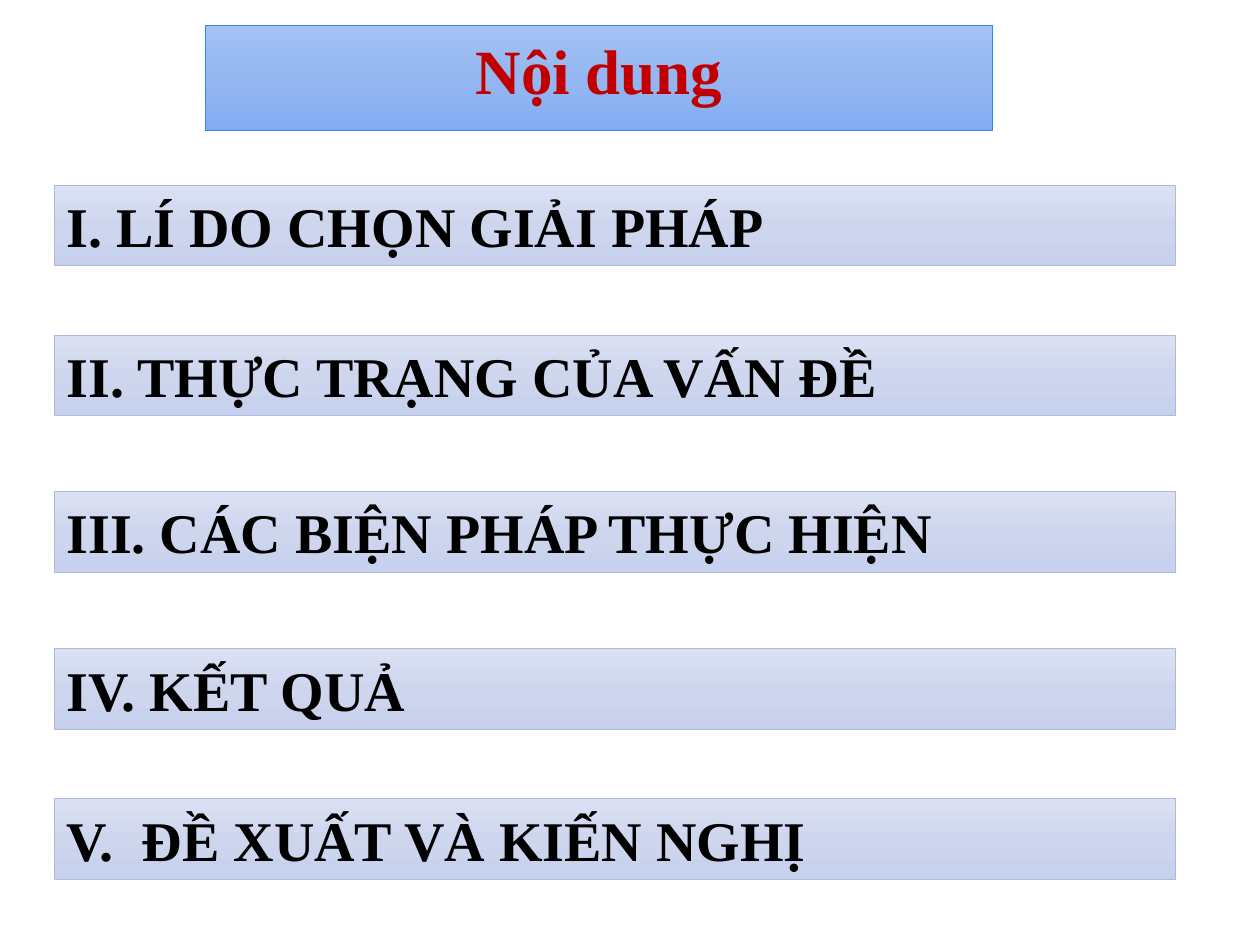
from copy import deepcopy

from pptx import Presentation
from pptx.dml.color import RGBColor
from pptx.enum.shapes import MSO_SHAPE as Shape
from pptx.enum.text import MSO_ANCHOR as Anchor, MSO_AUTO_SIZE as AutoSize, PP_ALIGN as Align
from pptx.oxml.ns import qn
from pptx.util import Inches, Pt

FONT = "Times New Roman"
RED = RGBColor(0xC0, 0x00, 0x00)
BLACK = RGBColor(0x00, 0x00, 0x00)
TITLE_LINE = RGBColor(0x2D, 0x8A, 0xE7)
TITLE_FILL = (RGBColor(0xA3, 0xC2, 0xF4), RGBColor(0x95, 0xB7, 0xF1), RGBColor(0x81, 0xAD, 0xF3))
ITEM_LINE = RGBColor(0xAA, 0xB8, 0xE2)
ITEM_FILL = (RGBColor(0xDB, 0xE1, 0xF3), RGBColor(0xCE, 0xD6, 0xEE), RGBColor(0xC7, 0xD0, 0xED))

ITEM_LEFT, ITEM_WIDTH, ITEM_HEIGHT = 0.43, 8.9, 0.64
ITEMS = (
    (1.47, "I. LÍ DO CHỌN GIẢI PHÁP"),
    (2.66, "II. THỰC TRẠNG CỦA VẤN ĐỀ"),
    (3.9, "III. CÁC BIỆN PHÁP THỰC HIỆN"),
    (5.15, "IV. KẾT QUẢ"),
    (6.34, "V.  ĐỀ XUẤT VÀ KIẾN NGHỊ"),
)


def style_box(sp, colors, line_color):
    """Give a box a vertical three-stop gradient and a thin outline."""
    sp.fill.gradient()
    sp.fill.gradient_angle = 270
    stops = sp.element.spPr.find(".//" + qn("a:gsLst"))
    stops.insert(1, deepcopy(stops[0]))
    for stop, position, color in zip(sp.fill.gradient_stops, (0, 0.5, 1), colors):
        stop.position = position
        stop.color.rgb = color
    sp.line.color.rgb = line_color
    sp.line.width = Pt(0.5)
    sp.shadow.inherit = False


def write_text(sp, text, size, color, align):
    """Write one bold line into a box."""
    tf = sp.text_frame
    tf.word_wrap = True
    tf.auto_size = AutoSize.SHAPE_TO_FIT_TEXT
    tf.vertical_anchor = Anchor.TOP
    p = tf.paragraphs[0]
    p.alignment = align
    r = p.add_run()
    r.text = text
    r.font.name = FONT
    r.font.size = Pt(size)
    r.font.bold = True
    r.font.color.rgb = color


def format_title(s, text):
    """Place and fill the title placeholder."""
    sp = s.shapes.title
    sp.left, sp.top, sp.width, sp.height = map(Inches, (1.63, 0.2, 6.25, 0.71))
    style_box(sp, TITLE_FILL, TITLE_LINE)
    write_text(sp, text, 36, RED, Align.CENTER)


def add_item(s, top, text):
    """Add one full-width agenda bar."""
    box = map(Inches, (ITEM_LEFT, top, ITEM_WIDTH, ITEM_HEIGHT))
    sp = s.shapes.add_shape(Shape.RECTANGLE, *box)
    style_box(sp, ITEM_FILL, ITEM_LINE)
    write_text(sp, text, 32, BLACK, Align.LEFT)


def main():
    """Build the agenda slide."""
    prs = Presentation()
    prs.slide_width, prs.slide_height = Inches(10), Inches(7.5)
    s = prs.slides.add_slide(prs.slide_layouts[5])
    format_title(s, "Nội dung")
    for top, text in ITEMS:
        add_item(s, top, text)
    prs.save("out.pptx")


if __name__ == "__main__":
    main()
